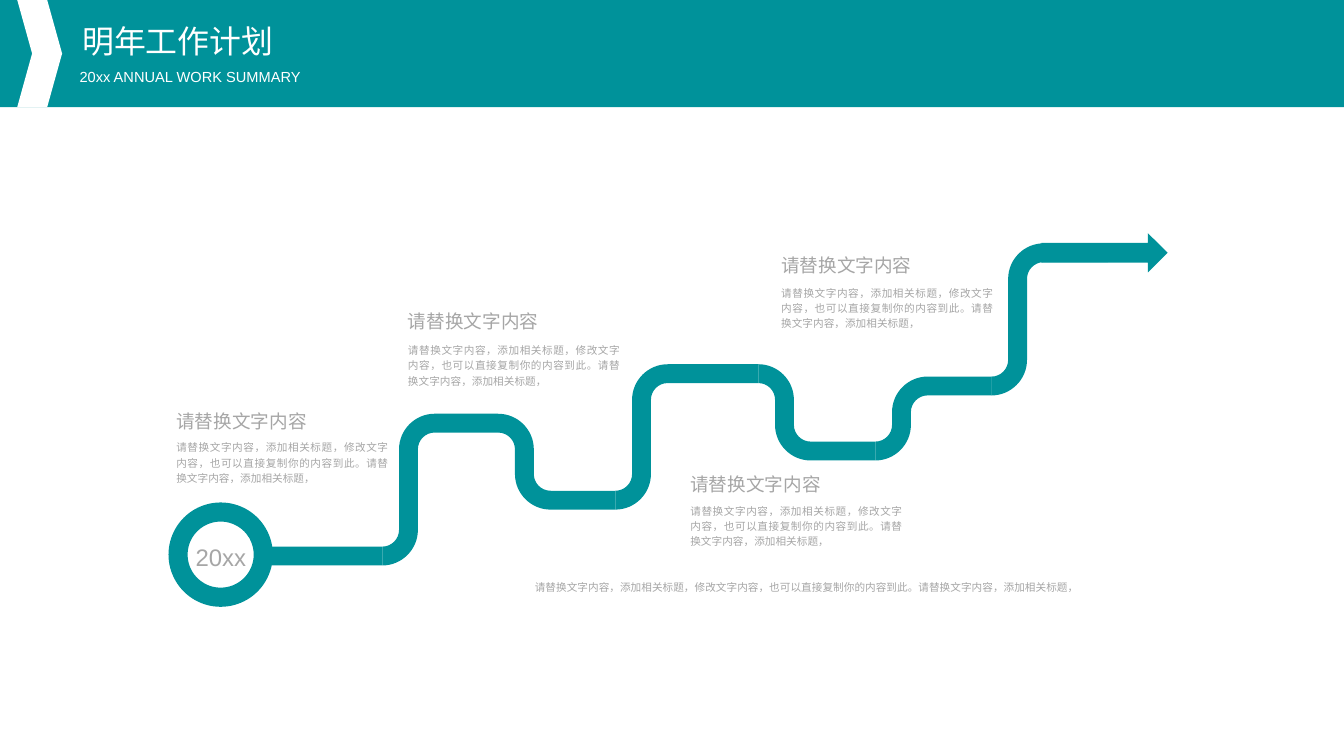
import math
from dataclasses import dataclass
from itertools import pairwise

from lxml import etree
from pptx import Presentation
from pptx.dml.color import RGBColor
from pptx.enum import shapes, text
from pptx.oxml import ns
from pptx.util import Pt


@dataclass(frozen=True)
class Theme:
    teal: RGBColor = RGBColor(0x00, 0x92, 0x9A)
    white: RGBColor = RGBColor(0xFF, 0xFF, 0xFF)
    grey: RGBColor = RGBColor(0xA6, 0xA6, 0xA6)
    latin: str = "Arial"
    cjk: str = "Noto Sans CJK SC"
    title: float = 24
    subtitle: float = 11
    year: float = 18
    heading: float = 14
    body: float = 8


@dataclass(frozen=True)
class Box:
    left: float
    top: float
    width: float
    height: float

    def emu(self) -> tuple:
        return Pt(self.left), Pt(self.top), Pt(self.width), Pt(self.height)


@dataclass(frozen=True)
class Node:
    """A point on the road's centre line where two bends meet."""
    x: float
    y: float


@dataclass(frozen=True)
class Step:
    left: float
    heading_top: float
    body_top: float


THEME = Theme()
SHAPE = shapes.MSO_SHAPE
ALIGN = text.PP_ALIGN
ANCHOR = text.MSO_ANCHOR

SLIDE_W, SLIDE_H, BANNER_H = 1012.32, 569.52, 80.64
BEND_RADIUS, ROAD_HALF = 19.7, 7.1
ARC_PULL = 0.55  # control point distance of a quarter circle, in radii
ARC_STARTS = (0, 4, 10, 14)  # where the bend outline has an arc's three points
ROAD = [
    Node(288, 418.9), Node(375.3, 318.8), Node(463.5, 376.8), Node(571.2, 281.5),
    Node(659.3, 339.8), Node(746.8, 290.8), Node(834.5, 190.4),
]
STEPS = [
    Step(307.3, 230.4, 257.1), Step(520, 352.8, 378.2),
    Step(588.4, 187.9, 213.8), Step(132.8, 305.3, 330.5),
]
HEADING = "请替换文字内容"
BODY = "请替换文字内容，添加相关标题，修改文字内容，也可以直接复制你的内容到此。请替换文字内容，添加相关标题，"


def paint(sp, color: RGBColor) -> None:
    sp.fill.solid()
    sp.fill.fore_color.rgb = color
    sp.line.fill.background()
    sp.shadow.inherit = False


def add_preset(s, kind: SHAPE, box: Box, color: RGBColor, adjust: float | None = None) -> None:
    sp = s.shapes.add_shape(kind, *box.emu())
    if adjust is not None:
        sp.adjustments[0] = adjust
    paint(sp, color)


def write(sp, content: str, *, size: float, color: RGBColor = THEME.grey,
          font: str = THEME.latin, align: ALIGN = ALIGN.LEFT, anchor: ANCHOR = ANCHOR.TOP,
          spacing: float = 1.2, before: float = 0) -> None:
    tf = sp.text_frame
    tf.margin_left = tf.margin_top = tf.margin_right = tf.margin_bottom = 0
    tf.word_wrap = True
    tf.auto_size = text.MSO_AUTO_SIZE.SHAPE_TO_FIT_TEXT
    tf.vertical_anchor = anchor
    p = tf.paragraphs[0]
    p.alignment, p.line_spacing, p.space_before = align, spacing, Pt(before)
    r = p.add_run()
    r.text = content
    r.font.size, r.font.name, r.font.color.rgb = Pt(size), font, color
    etree.SubElement(r.font._element, ns.qn("a:ea"), typeface=THEME.cjk)


def add_text(s, box: Box, content: str, **fmt) -> None:
    write(s.shapes.add_textbox(*box.emu()), content, **fmt)


def road_edge(a: Node, b: Node, offset: float) -> list[tuple]:
    """Trace one edge of the S-bend from a to b, arcs given with control points."""
    down = math.copysign(1, b.y - a.y)
    first, second = BEND_RADIUS + offset, BEND_RADIUS - offset
    riser, flat = a.x + first, a.x + 2 * BEND_RADIUS
    y1, y2 = a.y + down * BEND_RADIUS, b.y - down * BEND_RADIUS
    start_y, end_y = y1 - down * first, y2 + down * second
    return [
        (a.x, start_y), (a.x + ARC_PULL * first, start_y),
        (riser, y1 - down * ARC_PULL * first), (riser, y1),
        (riser, y2), (riser, y2 + down * ARC_PULL * second),
        (flat - ARC_PULL * second, end_y), (flat, end_y),
        (b.x, end_y),
    ]


def add_bend(s, a: Node, b: Node) -> None:
    outline = road_edge(a, b, ROAD_HALF) + road_edge(a, b, -ROAD_HALF)[::-1]
    points = [(Pt(x), Pt(y)) for x, y in outline]
    builder = s.shapes.build_freeform(*points[0])
    builder.add_line_segments(points[1:], close=True)
    sp = builder.convert_to_shape()
    lines = list(sp.element.iter(ns.qn("a:lnTo")))
    for i in ARC_STARTS:
        arc = etree.Element(ns.qn("a:cubicBezTo"))
        lines[i].addprevious(arc)
        for line in lines[i:i + 3]:
            arc.append(line[0])
            line.getparent().remove(line)
    paint(sp, THEME.teal)


def place(s, sp, box: Box) -> None:
    """Move a placeholder to the box and in front of the shapes drawn so far."""
    sp.left, sp.top, sp.width, sp.height = box.emu()
    s.shapes.element.append(sp.element)


def add_header(s) -> None:
    add_preset(s, SHAPE.RECTANGLE, Box(0, 0, SLIDE_W, BANNER_H), THEME.teal)
    add_preset(s, SHAPE.CHEVRON, Box(13, 0, 33.8, BANNER_H), THEME.white, 0.332)
    title, subtitle = s.shapes.title, s.placeholders[1]
    place(s, title, Box(61.9, 19.4, 248.4, 25.9))
    write(title, "明年工作计划", size=THEME.title, color=THEME.white, font=THEME.cjk,
          spacing=0.9, before=10)
    place(s, subtitle, Box(59.9, 52.6, 250.6, 12.2))
    write(subtitle, "20xx ANNUAL WORK SUMMARY", size=THEME.subtitle, color=THEME.white,
          spacing=0.9, before=10)
    props = subtitle.text_frame.paragraphs[0]._p.get_or_add_pPr()
    props.set("marL", "0")
    props.set("indent", "0")
    etree.SubElement(props, ns.qn("a:buNone"))


def add_road(s) -> None:
    start, end = ROAD[0], ROAD[-1]
    for a, b in pairwise(ROAD):
        add_bend(s, a, b)
    add_preset(s, SHAPE.DONUT, Box(126.9, 378.5, 78.6, 78.6), THEME.teal, 0.183)
    add_preset(s, SHAPE.RECTANGLE,
               Box(204.5, start.y - ROAD_HALF, start.x - 204.5, 2 * ROAD_HALF), THEME.teal)
    add_preset(s, SHAPE.RIGHT_ARROW, Box(784.4, end.y - 14.75, 95, 29.5), THEME.teal)
    add_text(s, Box(133.6, 404.3, 65.5, 25.9), "20xx", size=THEME.year, align=ALIGN.CENTER)


def add_step(s, step: Step) -> None:
    add_text(s, Box(step.left, step.heading_top, 135, 20.2), HEADING, size=THEME.heading)
    add_text(s, Box(step.left, step.body_top, 159.8, 34.6), BODY, size=THEME.body,
             align=ALIGN.JUSTIFY, anchor=ANCHOR.MIDDLE)


def main() -> None:
    prs = Presentation()
    prs.slide_width, prs.slide_height = Pt(SLIDE_W), Pt(SLIDE_H)
    s = prs.slides.add_slide(prs.slide_layouts[1])
    add_header(s)
    add_road(s)
    for step in STEPS:
        add_step(s, step)
    add_text(s, Box(402.9, 436, 486.7, 11.5), BODY, size=THEME.body, align=ALIGN.JUSTIFY)
    prs.save("out.pptx")


if __name__ == "__main__":
    main()
